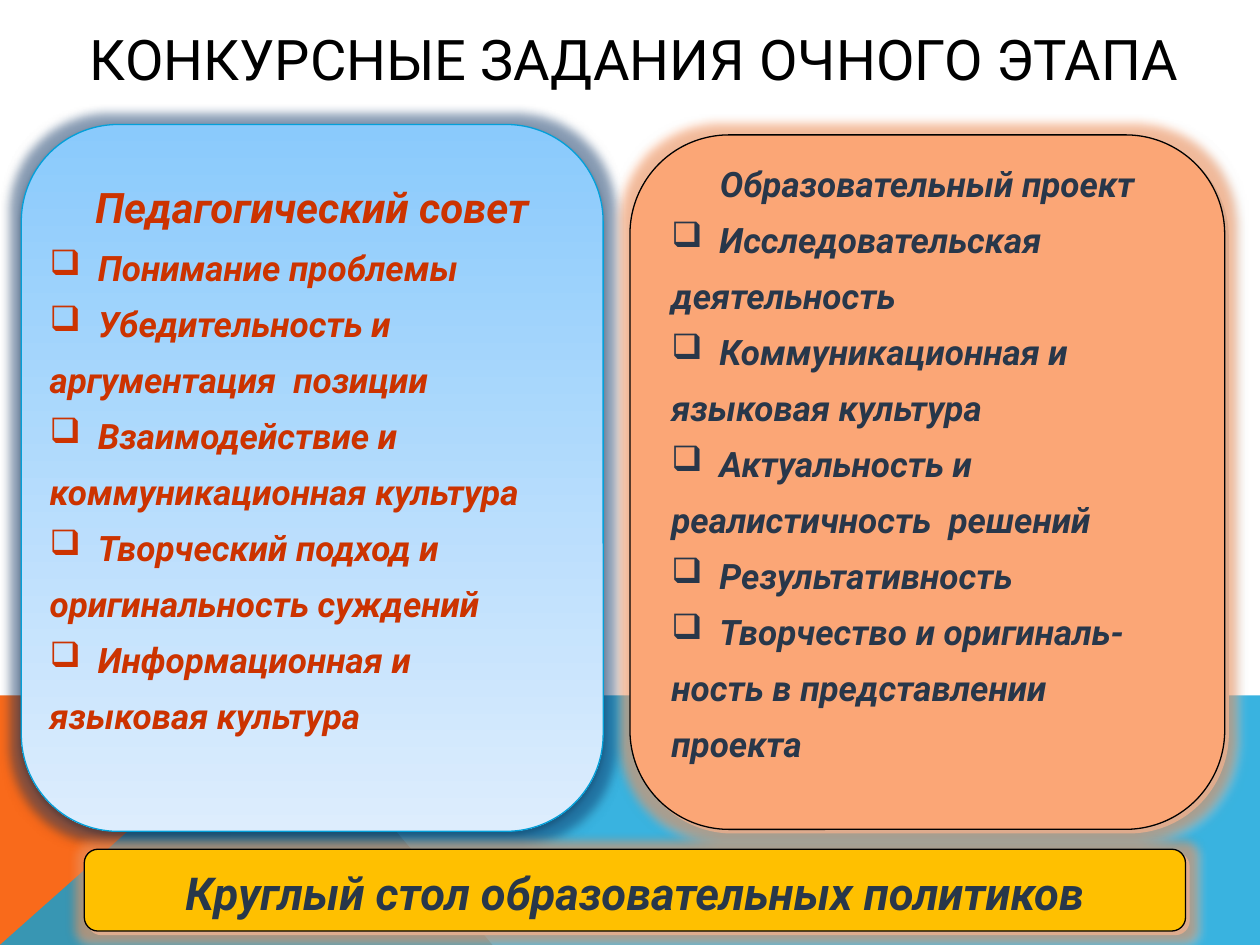
from lxml import etree
from pptx import Presentation
from pptx.dml.color import RGBColor
from pptx.enum import shapes, text
from pptx.oxml.ns import qn
from pptx.util import Cm, Pt

FONT = "Roboto"
COLORS = {
    "black": "000000", "orange": "F96A1B", "blue": "08A1D9", "peach": "FBA676",
    "sky": "8ACAFC", "pale": "DDEDFD", "edge": "03A0D9", "gold": "FFC000",
    "red": "CC3300", "slate": "28374A", "shade": "CDD7D9", "navy": "0B3C78",
}
BULLET = "❑"
HANGING = Cm(0.97)

# A leading bullet sign marks a criterion; other lines continue it.
COUNCIL = [
    "Педагогический совет",
    "❑Понимание проблемы",
    "❑Убедительность и",
    "аргументация  позиции",
    "❑Взаимодействие и",
    "коммуникационная культура",
    "❑Творческий подход и",
    "оригинальность суждений",
    "❑Информационная и",
    "языковая культура",
]
PROJECT = [
    "Образовательный проект",
    "❑Исследовательская",
    "деятельность",
    "❑Коммуникационная и",
    "языковая культура",
    "❑Актуальность и",
    "реалистичность  решений",
    "❑Результативность",
    "❑Творчество и оригиналь-",
    "ность в представлении",
    "проекта",
]


def rgb(name):
    return RGBColor.from_string(COLORS[name])


def add_color(parent, name, alpha):
    color = etree.SubElement(parent, qn("a:srgbClr"), val=COLORS[name])
    etree.SubElement(color, qn("a:alpha"), val=str(alpha * 1000))


class SlideBuilder:
    def __init__(self, presentation):
        self.slide = presentation.slides.add_slide(presentation.slide_layouts[5])

    def format_font(self, paragraph, color, size, bold=True, italic=True):
        values = {"name": FONT, "size": Pt(size), "bold": bold, "italic": italic}
        for key, value in values.items():
            setattr(paragraph.font, key, value)
        paragraph.font.color.rgb = rgb(color)

    def title(self, words, left, top, width, height):
        shape = self.slide.shapes.title
        place = {"left": left, "top": top, "width": width, "height": height}
        for key, value in place.items():
            setattr(shape, key, Cm(value))
        frame = shape.text_frame
        frame.text = words
        frame.word_wrap = True
        frame.vertical_anchor = text.MSO_ANCHOR.TOP
        frame.margin_top = frame.margin_bottom = 0
        paragraph = frame.paragraphs[0]
        paragraph.alignment = text.PP_ALIGN.CENTER
        self.format_font(paragraph, "black", 32, bold=False, italic=False)

    def polygon(self, points, color, alpha=100):
        corners = [(Cm(x), Cm(y)) for x, y in points]
        builder = self.slide.shapes.build_freeform(*corners[0])
        builder.add_line_segments(corners[1:], close=True)
        shape = builder.convert_to_shape()
        shape.shadow.inherit = False
        shape.fill.solid()
        shape.fill.fore_color.rgb = rgb(color)
        shape.line.fill.background()
        if alpha < 100:
            fill = shape.fill.fore_color._xFill.find(qn("a:srgbClr"))
            etree.SubElement(fill, qn("a:alpha"), val=str(alpha * 1000))

    def panel(self, box, fills, line, glow, shadow):
        """Rounded box; two fill colours make a gradient from top to bottom."""
        shape = self.slide.shapes.add_shape(
            shapes.MSO_SHAPE.ROUNDED_RECTANGLE, *[Cm(value) for value in box])
        if len(fills) == 2:
            shape.fill.gradient()
            shape.fill.gradient_angle = 270
            for stop, color in zip(shape.fill.gradient_stops, fills):
                stop.color.rgb = rgb(color)
        else:
            shape.fill.solid()
            shape.fill.fore_color.rgb = rgb(fills[0])
        shape.line.color.rgb = rgb(line)
        shape.line.width = Pt(0.75)
        shape.shadow.inherit = False
        effects = shape._element.spPr.find(qn("a:effectLst"))
        halo = etree.SubElement(effects, qn("a:glow"), rad=str(Pt(11)))
        add_color(halo, glow, 40)
        color, alpha, blur, distance, angle = shadow
        outer = etree.SubElement(
            effects, qn("a:outerShdw"), blurRad=str(Pt(blur)),
            dist=str(Pt(distance)), dir=str(angle * 60000), rotWithShape="0")
        add_color(outer, color, alpha)
        return shape

    def lines(self, shape, lines, color, heading_size, inset=0, bottom=0, spacing=None):
        frame = shape.text_frame
        margins = {"left": inset, "right": inset, "top": 0, "bottom": bottom}
        for side, value in margins.items():
            setattr(frame, f"margin_{side}", Cm(value))
        frame.word_wrap = True
        frame.vertical_anchor = text.MSO_ANCHOR.MIDDLE
        for index, line in enumerate(lines):
            paragraph = frame.paragraphs[0] if index == 0 else frame.add_paragraph()
            paragraph.text = line.removeprefix(BULLET)
            paragraph.alignment = text.PP_ALIGN.LEFT if index else text.PP_ALIGN.CENTER
            paragraph.space_before = Pt(8 if index else 0)
            if spacing:
                paragraph.line_spacing = spacing
            if line.startswith(BULLET):
                properties = paragraph._p.get_or_add_pPr()
                properties.set("marL", str(HANGING))
                properties.set("indent", str(-HANGING))
                etree.SubElement(properties, qn("a:buChar"), char=BULLET)
            self.format_font(paragraph, color, 20 if index else heading_size)


def main():
    presentation = Presentation()
    width, height = 25.4, 19.05
    presentation.slide_width, presentation.slide_height = Cm(width), Cm(height)
    builder = SlideBuilder(presentation)

    horizon, corner = 14.02, 5.66
    builder.polygon([(0, height), (0, horizon), (corner, horizon), (9.93, height)], "orange")
    builder.polygon([(0, height), (corner, horizon), (width, horizon), (width, height)],
                    "blue", 80)
    builder.title("КОНКУРСНЫЕ ЗАДАНИЯ ОЧНОГО ЭТАПА", 0.89, 0.5, 23.8, 1.96)

    flat_shadow = ("shade", 100, 0, 2.8, 45)
    project = builder.panel((12.7, 2.72, 11.99, 14), ["peach"], "black", "orange", flat_shadow)
    builder.lines(project, PROJECT, "slate", 20, inset=0.25, bottom=0.76)
    council = builder.panel((0.43, 2.51, 11.73, 14.25), ["sky", "pale"], "edge", "navy",
                            ("black", 38, 3.1, 1.6, 90))
    builder.lines(council, COUNCIL, "red", 24, bottom=0.76)
    forum = builder.panel((1.7, 17.12, 22.2, 1.65), ["gold"], "black", "orange", flat_shadow)
    builder.lines(forum, ["Круглый стол образовательных политиков"], "slate", 25.9, spacing=1.1)

    presentation.save("out.pptx")


if __name__ == "__main__":
    main()
